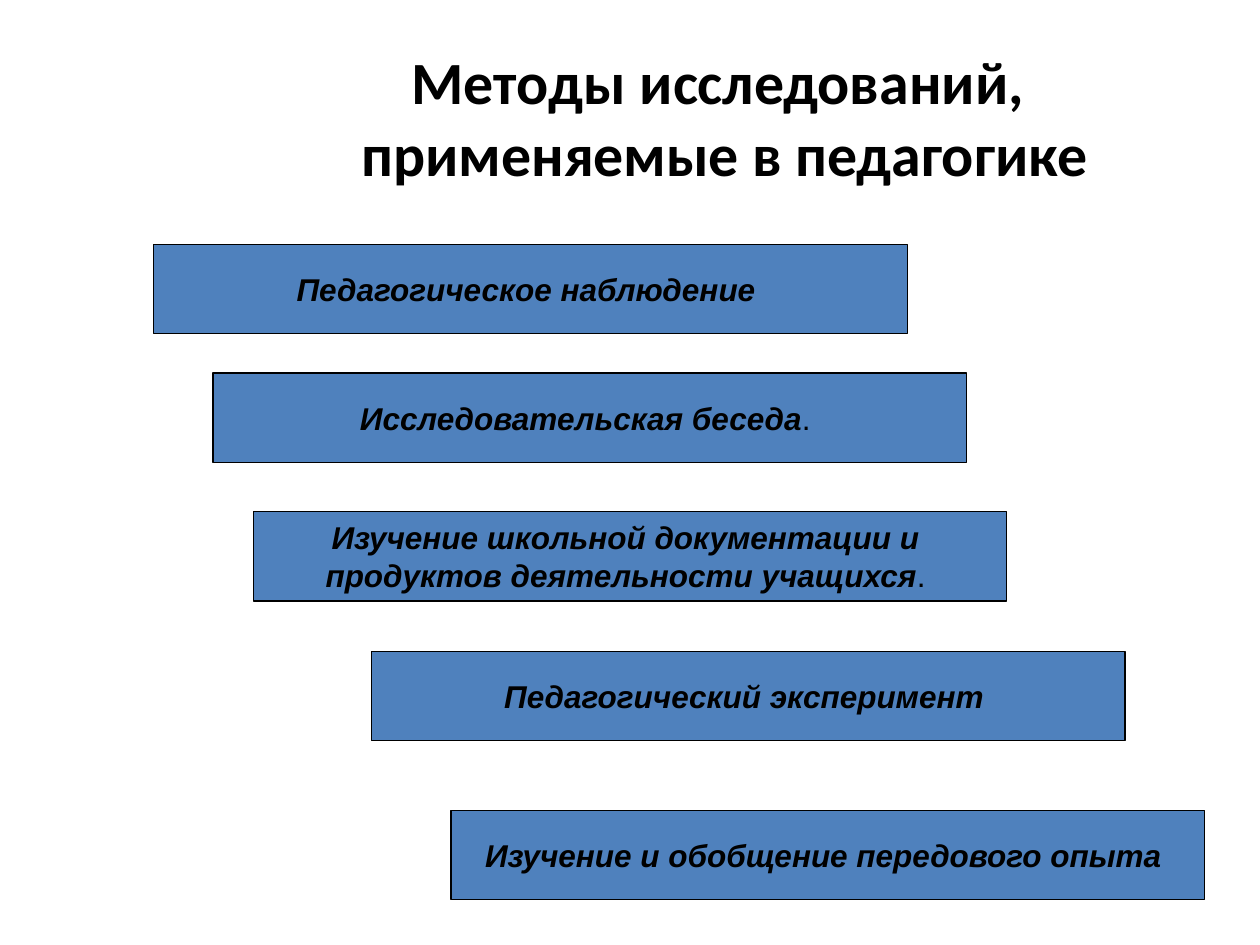
from pptx import Presentation
from pptx.dml.color import RGBColor
from pptx.enum.shapes import MSO_SHAPE
from pptx.enum.text import MSO_ANCHOR, PP_ALIGN
from pptx.util import Inches, Pt

BAR_WIDTH, BAR_HEIGHT = 5.98, 0.71
METHODS = [
    (1.22, 1.94, ["Педагогическое наблюдение "], ""),
    (1.69, 2.96, ["Исследовательская беседа"], ". "),
    (2.01, 4.06, ["Изучение школьной документации и ",
                  "продуктов деятельности учащихся"], ". "),
    (2.95, 5.17, ["Педагогический эксперимент "], ""),
    (3.58, 6.43, ["Изучение и обобщение передового опыта "], ""),
]


def color(value):
    """Turn a hex string into a colour."""
    return RGBColor.from_string(value)


def add_span(para, text, size, font, bold=False, italic=False):
    """Append one formatted run to a paragraph."""
    span = para.add_run()
    span.text = text
    span.font.size = Pt(size)
    span.font.name = font
    span.font.bold = bold
    span.font.italic = italic
    span.font.color.rgb = color("000000")


def add_title(page, lines):
    """Add the centred heading, one line per string."""
    box = page.shapes.add_textbox(Inches(1.5), Inches(0.3), Inches(8.5), Inches(1.25))
    frame = box.text_frame
    frame.word_wrap = True
    frame.vertical_anchor = MSO_ANCHOR.MIDDLE
    para = frame.paragraphs[0]
    para.alignment = PP_ALIGN.CENTER
    for index, line in enumerate(lines):
        if index:
            para.add_line_break()
        add_span(para, line, 34.2, "Calibri", bold=True)


def add_method(page, left, top, lines, ending):
    """Add one bar naming a method, with an optional plain ending."""
    bar = page.shapes.add_shape(MSO_SHAPE.RECTANGLE, Inches(left), Inches(top),
                                Inches(BAR_WIDTH), Inches(BAR_HEIGHT))
    bar.shadow.inherit = False
    bar.fill.solid()
    bar.fill.fore_color.rgb = color("4F81BD")
    bar.line.color.rgb = color("000000")
    bar.line.width = Pt(0.75)
    frame = bar.text_frame
    frame.word_wrap = False
    frame.vertical_anchor = MSO_ANCHOR.MIDDLE
    for index, line in enumerate(lines):
        para = frame.add_paragraph() if index else frame.paragraphs[0]
        para.alignment = PP_ALIGN.CENTER
        add_span(para, line, 18, "Arial", bold=True, italic=True)
    if ending:
        add_span(para, ending, 18, "Arial")


def main():
    """Build and save the slide."""
    deck = Presentation()
    deck.slide_width, deck.slide_height = Inches(10), Inches(7.5)
    page = deck.slides.add_slide(deck.slide_layouts[6])
    add_title(page, ["Методы исследований, ", "применяемые в педагогике"])
    for method in METHODS:
        add_method(page, *method)
    deck.save("out.pptx")


if __name__ == "__main__":
    main()
